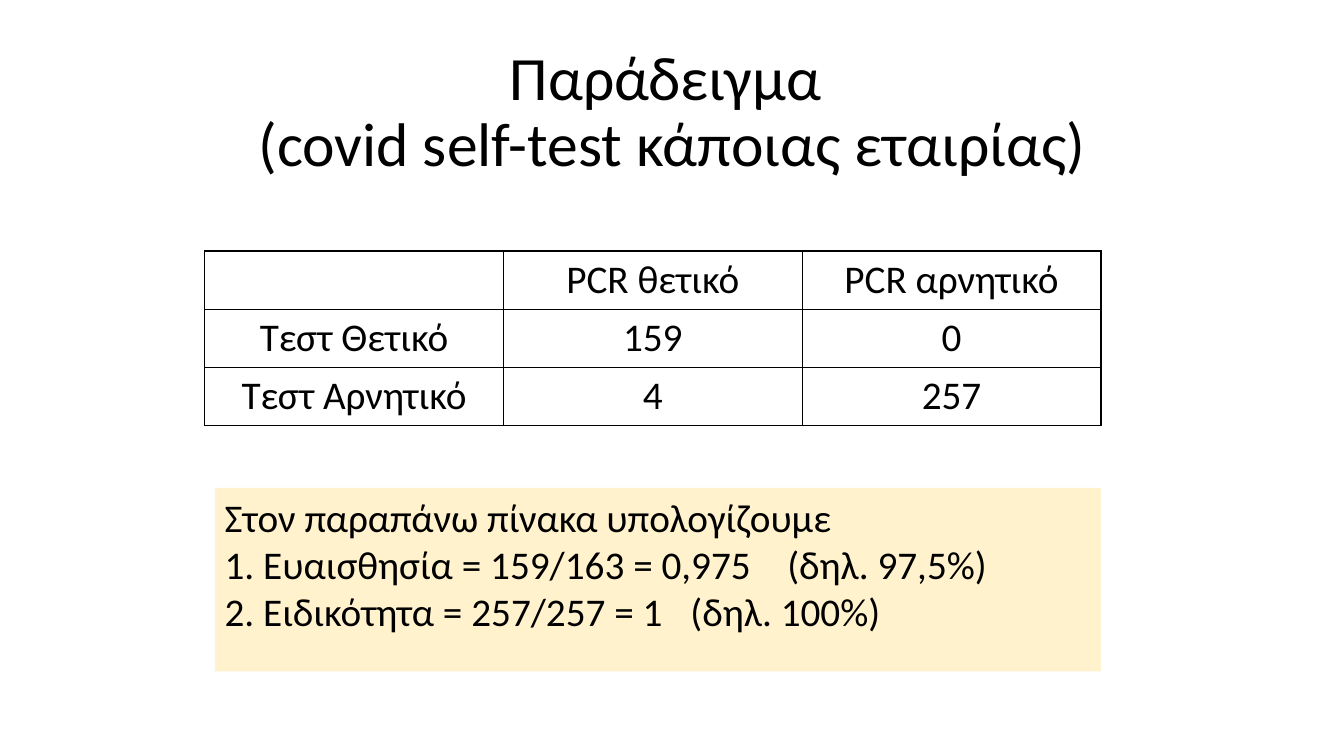
from lxml.etree import SubElement
from pptx import Presentation
from pptx.dml.color import RGBColor
from pptx.enum.shapes import MSO_SHAPE
from pptx.enum.text import MSO_ANCHOR, PP_ALIGN
from pptx.oxml.ns import qn
from pptx.util import Inches, Pt

BLACK = "000000"
CREAM = "FFF2CC"
RESULTS = [
    ["", "PCR θετικό", "PCR αρνητικό"],
    ["Τεστ Θετικό", "159", "0"],
    ["Τεστ Αρνητικό", "4", "257"],
]
# Each line with the tab position of its percentage, if it has one
CALCULATIONS = [
    ("Στον παραπάνω πίνακα υπολογίζουμε", None),
    ("1. Ευαισθησία = 159/163 = 0,975\t(δηλ. 97,5%)", 5.58),
    ("2. Ειδικότητα = 257/257 = 1\t(δηλ. 100%)", 4.62),
]


def color(hex_value):
    return RGBColor.from_string(hex_value)


def format_paragraph(paragraph, size, alignment):
    paragraph.alignment = alignment
    for font in [paragraph.font] + [run.font for run in paragraph.runs]:
        font.name = "Calibri"
        font.size = Pt(size)
        font.color.rgb = color(BLACK)


def add_tab_stop(paragraph, position):
    properties = paragraph._p.get_or_add_pPr()
    tab_list = properties.makeelement(qn("a:tabLst"))
    SubElement(tab_list, qn("a:tab"), pos=str(Inches(position)), algn="l")
    # Tab stops come before the default run properties
    properties.find(qn("a:defRPr")).addprevious(tab_list)


def add_borders(cell, hex_value, width):
    properties = cell._tc.get_or_add_tcPr()
    for side in ("lnL", "lnR", "lnT", "lnB"):
        line = SubElement(properties, qn(f"a:{side}"), w=str(Pt(width)))
        fill = SubElement(line, qn("a:solidFill"))
        SubElement(fill, qn("a:srgbClr"), val=hex_value)


def set_title(slide, text):
    title = slide.shapes.title
    title.left, title.top = Inches(0.92), Inches(0.4)
    title.width, title.height = Inches(11.5), Inches(1.45)
    title.text_frame.text = text
    title.text_frame.vertical_anchor = MSO_ANCHOR.MIDDLE
    paragraph = title.text_frame.paragraphs[0]
    paragraph.line_spacing = 0.9
    format_paragraph(paragraph, 44, PP_ALIGN.CENTER)


def add_results_table(slide, rows):
    frame = slide.shapes.add_table(
        len(rows), len(rows[0]),
        Inches(2.03), Inches(2.49), Inches(8.89), Inches(1.73))
    table = frame.table
    table.first_row = False
    table.horz_banding = False
    for row_index, row in enumerate(rows):
        for column_index, text in enumerate(row):
            cell = table.cell(row_index, column_index)
            cell.text_frame.text = text
            format_paragraph(cell.text_frame.paragraphs[0], 28, PP_ALIGN.CENTER)
            add_borders(cell, BLACK, 1)
            cell.fill.background()


def add_calculation_box(slide, lines):
    box = slide.shapes.add_shape(
        MSO_SHAPE.RECTANGLE,
        Inches(2.13), Inches(4.84), Inches(8.79), Inches(1.82))
    box.shadow.inherit = False
    box.fill.solid()
    box.fill.fore_color.rgb = color(CREAM)
    box.line.fill.background()
    text_frame = box.text_frame
    text_frame.word_wrap = True
    text_frame.vertical_anchor = MSO_ANCHOR.TOP
    text_frame.text = "\n".join(text for text, _ in lines)
    for paragraph, (_, tab_position) in zip(text_frame.paragraphs, lines):
        format_paragraph(paragraph, 28, PP_ALIGN.LEFT)
        if tab_position:
            add_tab_stop(paragraph, tab_position)


def main():
    presentation = Presentation()
    presentation.slide_width = Inches(13.33)
    presentation.slide_height = Inches(7.5)
    title_only = presentation.slide_layouts[5]
    slide = presentation.slides.add_slide(title_only)

    set_title(slide, "Παράδειγμα \v(covid self-test κάποιας εταιρίας)")
    add_results_table(slide, RESULTS)
    add_calculation_box(slide, CALCULATIONS)

    presentation.save("out.pptx")


if __name__ == "__main__":
    main()
